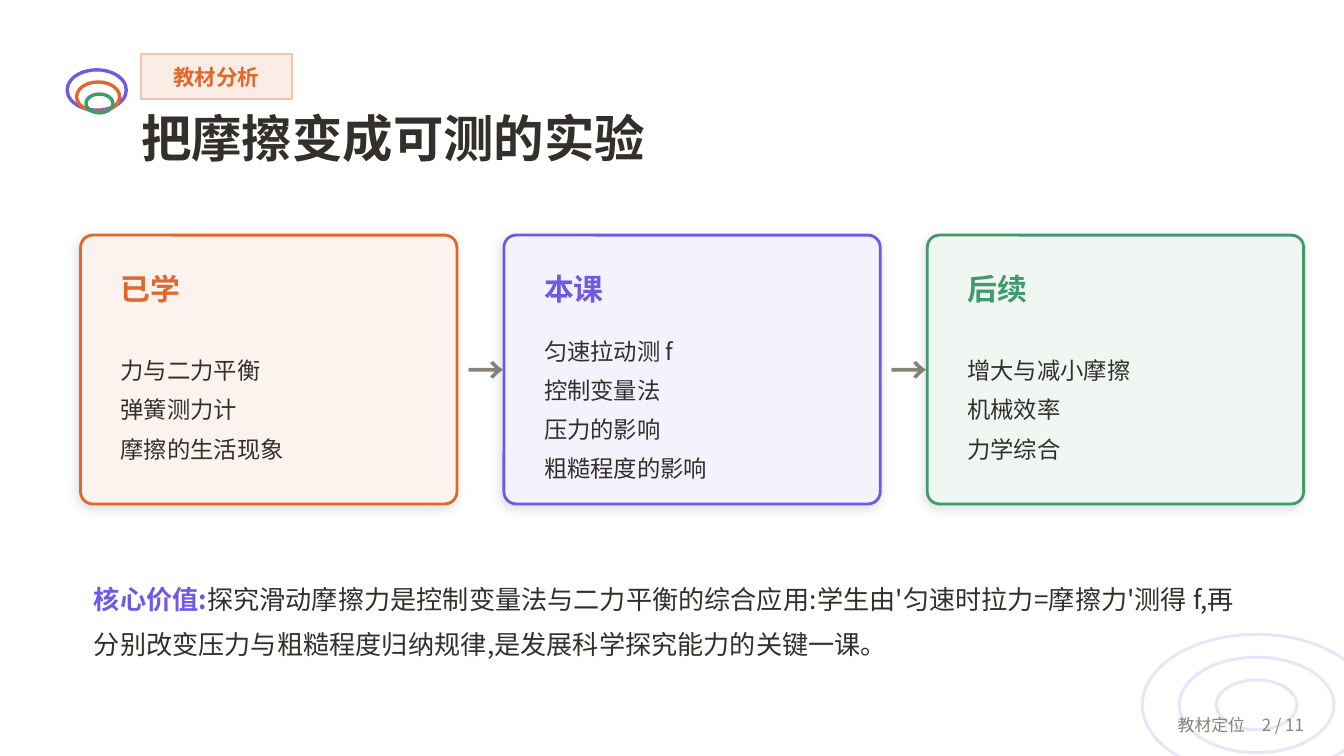
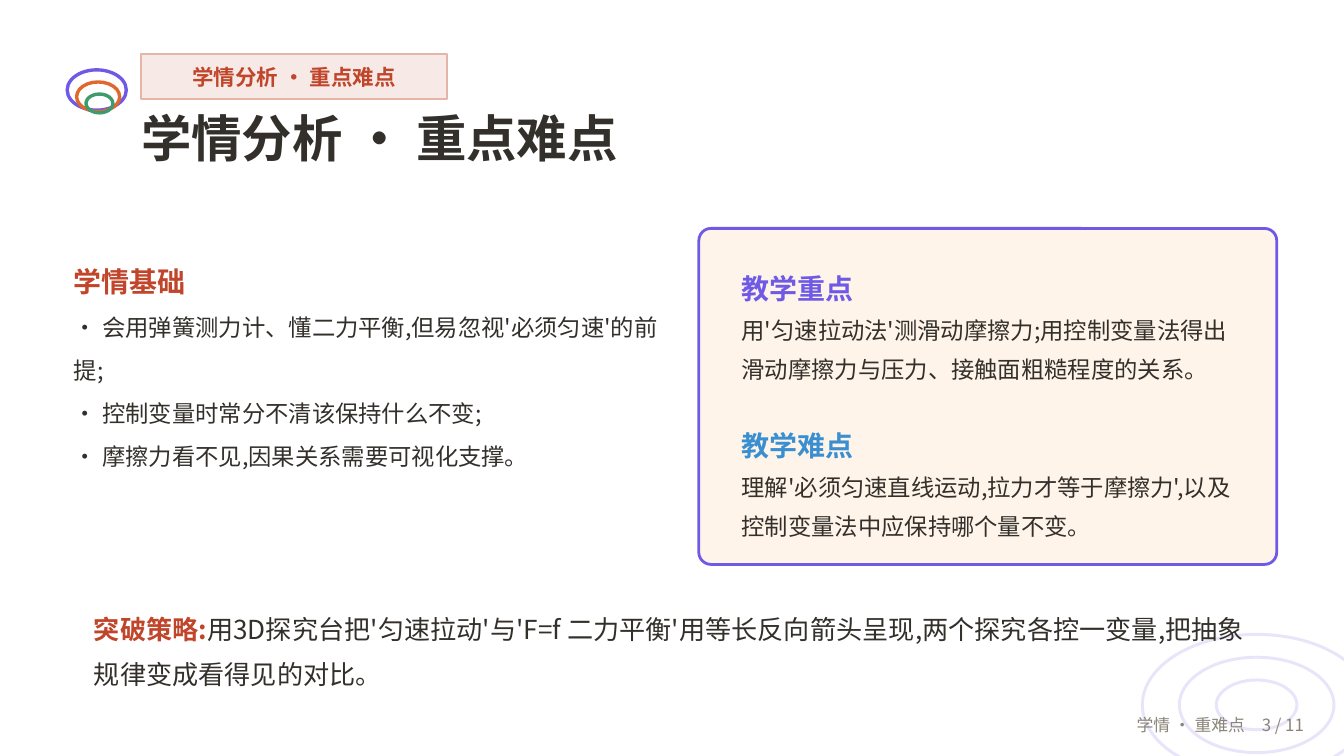
from lxml import etree
from pptx import Presentation
from pptx import util as u
from pptx.dml.color import RGBColor
from pptx.enum import shapes, text
from pptx.oxml.ns import qn

FONT = "Noto Sans CJK SC"
CELL = 0.1  # one grid column or row, in inches
TOTAL = 11
COLORS = {
    "ink": "33302B", "muted": "8A8478", "ripple": "E8E5FB",
    "violet": "6E5AE6", "orange": "E0682C", "green": "3F9B6E",
    "red": "C0452A", "blue": "3A8FD0", "cream": "FFF4EA",
    "orange_tint": "FDF3EE", "violet_tint": "F3F2FD", "green_tint": "F0F7F3",
    "orange_tag": "FBEDE6", "orange_edge": "F3C3AB",
    "red_tag": "F7E9E5", "red_edge": "E6B5AA",
}


def rgb(name):
    return RGBColor.from_string(COLORS[name])


def grid(*cells):
    return [u.Inches(c * CELL) for c in cells]


def add_run(p, wording, size=12.5, color="ink", bold=False):
    r = p.add_run()
    r.text = wording
    r.font.size, r.font.bold, r.font.name = u.Pt(size), bold, FONT
    r.font.color.rgb = rgb(color)
    etree.SubElement(r._r.get_or_add_rPr(), qn("a:ea"), typeface=FONT)


def add_shadow(sp):
    effects = sp._element.spPr.find(qn("a:effectLst"))
    shadow = etree.SubElement(effects, qn("a:outerShdw"), blurRad=str(u.Pt(6)),
                              dist=str(u.Pt(2)), dir=str(135 * 60000), rotWithShape="0")
    black = etree.SubElement(shadow, qn("a:srgbClr"), val="000000")
    etree.SubElement(black, qn("a:alpha"), val="12000")


class Deck:
    def __init__(self):
        self.prs = Presentation()
        self.prs.slide_width = u.Inches(10)
        self.prs.slide_height = self.prs.slide_width * 9 // 16
        self.s = None

    def slide(self, number, tag, tag_width, title, footer, color):
        """Start a slide with its ripples, mark, tag, title and footer."""
        self.s = self.prs.slides.add_slide(self.prs.slide_layouts[5])
        # Corner ripples and the header mark
        for x, y, w, h in ((85, 47.2, 17, 10.5), (87.75, 48.9, 11.5, 7.1), (90.5, 50.6, 6, 3.7)):
            self.shape("OVAL", (x, y, w, h), "ripple", 1.6)
        for i, (hue, w, h) in enumerate((("violet", 4.4, 3), ("orange", 3.2, 2.2),
                                         ("green", 2, 1.4))):
            self.shape("OVAL", (5 + 0.7 * i, 5.2 + 0.9 * i, w, h), hue, 1.8)
        # Tag
        sp = self.shape("RECTANGLE", (10.5, 4, tag_width, 3.4), color + "_edge", 1, color + "_tag")
        self.fill_text(sp, [[(tag, dict(size=11.5, color=color, bold=True))]],
                       align="CENTER", inset=False)
        # Title
        sp = self.s.shapes.title
        sp.left, sp.top, sp.width, sp.height = grid(10.5, 8, 84, 5.5)
        self.fill_text(sp, [[(title, dict(size=27, bold=True))]], anchor="TOP", inset=False)
        # Footer
        self.text((80, 52.45, 18, 3), [[(f"{footer}　{number} / {TOTAL}",
                                         dict(size=9, color="muted"))]], align="RIGHT")

    def shape(self, kind, box, line, weight, fill=None, corner=None):
        sp = self.s.shapes.add_shape(getattr(shapes.MSO_SHAPE, kind), *grid(*box))
        sp.shadow.inherit = False
        sp.line.color.rgb, sp.line.width = rgb(line), u.Pt(weight)
        if fill:
            sp.fill.solid()
            sp.fill.fore_color.rgb = rgb(fill)
        else:
            sp.fill.background()
        if corner:
            sp.adjustments[0] = corner
        return sp

    def fill_text(self, sp, paragraphs, align="LEFT", anchor="MIDDLE", inset=True,
                  spacing=None, gaps=None):
        """Write paragraphs, each a list of (wording, run format) pairs."""
        tf = sp.text_frame
        tf.word_wrap, tf.auto_size = True, text.MSO_AUTO_SIZE.NONE
        tf.vertical_anchor = getattr(text.MSO_ANCHOR, anchor)
        if not inset:
            tf.margin_left = tf.margin_right = tf.margin_top = tf.margin_bottom = 0
        for i, runs in enumerate(paragraphs):
            p = tf.paragraphs[0] if i == 0 else tf.add_paragraph()
            p.alignment = getattr(text.PP_ALIGN, align)
            if spacing:
                p.line_spacing = u.Pt(spacing)
            if gaps and i in gaps:
                p.space_before = u.Pt(gaps[i])
            for wording, style in runs:
                add_run(p, wording, **style)

    def text(self, box, paragraphs, **style):
        self.fill_text(self.s.shapes.add_textbox(*grid(*box)), paragraphs, **style)

    def card(self, x, color, heading, lines):
        sp = self.shape("ROUNDED_RECTANGLE", (x, 17.5, 28, 20), color, 1.5, color + "_tint", 0.045)
        add_shadow(sp)
        self.text((x + 2, 19.5, 24, 4), [[(heading, dict(size=16, color=color, bold=True))]])
        self.text((x + 2, 23.8, 24, 12.5), [[(line, {})] for line in lines], spacing=21)

    def takeaway(self, y, height, color, label, wording):
        self.text((6, y, 88.5, height),
                  [[(label, dict(size=14, color=color, bold=True)), (wording, dict(size=14))]],
                  spacing=24)


def heading(wording, color):
    return [(wording, dict(size=15, color=color, bold=True))]


def positioning(deck):
    deck.slide(2, "教材分析", 11.2, "把摩擦变成可测的实验", "教材定位", "orange")
    # Three stages of learning, with arrows between them
    stages = [
        ("orange", "已学", ["力与二力平衡", "弹簧测力计", "摩擦的生活现象"]),
        ("violet", "本课", ["匀速拉动测 f", "控制变量法", "压力的影响", "粗糙程度的影响"]),
        ("green", "后续", ["增大与减小摩擦", "机械效率", "力学综合"]),
    ]
    for i, stage in enumerate(stages):
        x = 6 + 31.5 * i
        deck.card(x, *stage)
        if i < len(stages) - 1:
            deck.text((x + 27.8, 25.5, 4, 4), [[("→", dict(size=20, color="muted", bold=True))]])
    deck.takeaway(41.5, 8.5, "violet", "核心价值:",
                  "探究滑动摩擦力是控制变量法与二力平衡的综合应用:学生由'匀速时拉力=摩擦力'测得 f,"
                  "再分别改变压力与粗糙程度归纳规律,是发展科学探究能力的关键一课。")


def key_points(deck):
    name = "学情分析 · 重点难点"
    deck.slide(3, name, 22.75, name, "学情 · 重难点", "red")
    # What learners already know
    basics = ["会用弹簧测力计、懂二力平衡,但易忽视'必须匀速'的前提;",
              "控制变量时常分不清该保持什么不变;",
              "摩擦力看不见,因果关系需要可视化支撑。"]
    deck.text((5.5, 19, 45, 18),
              [heading("学情基础", "red")] + [[("· " + basic, {})] for basic in basics],
              anchor="TOP", inset=False, spacing=23)
    # Focus and difficulty panel
    deck.shape("ROUNDED_RECTANGLE", (52, 17, 43, 25), "violet", 1.5, "cream", 0.036)
    deck.text((54.2, 19, 39.2, 22), [
        heading("教学重点", "violet"),
        [("用'匀速拉动法'测滑动摩擦力;用控制变量法得出滑动摩擦力与压力、接触面粗糙程度的关系。", {})],
        heading("教学难点", "blue"),
        [("理解'必须匀速直线运动,拉力才等于摩擦力',以及控制变量法中应保持哪个量不变。", {})],
    ], spacing=21, gaps={2: 21})
    deck.takeaway(44.5, 7, "red", "突破策略:",
                  "用3D探究台把'匀速拉动'与'F=f 二力平衡'用等长反向箭头呈现,"
                  "两个探究各控一变量,把抽象规律变成看得见的对比。")


def main():
    deck = Deck()
    positioning(deck)
    key_points(deck)
    deck.prs.save("out.pptx")


if __name__ == "__main__":
    main()
